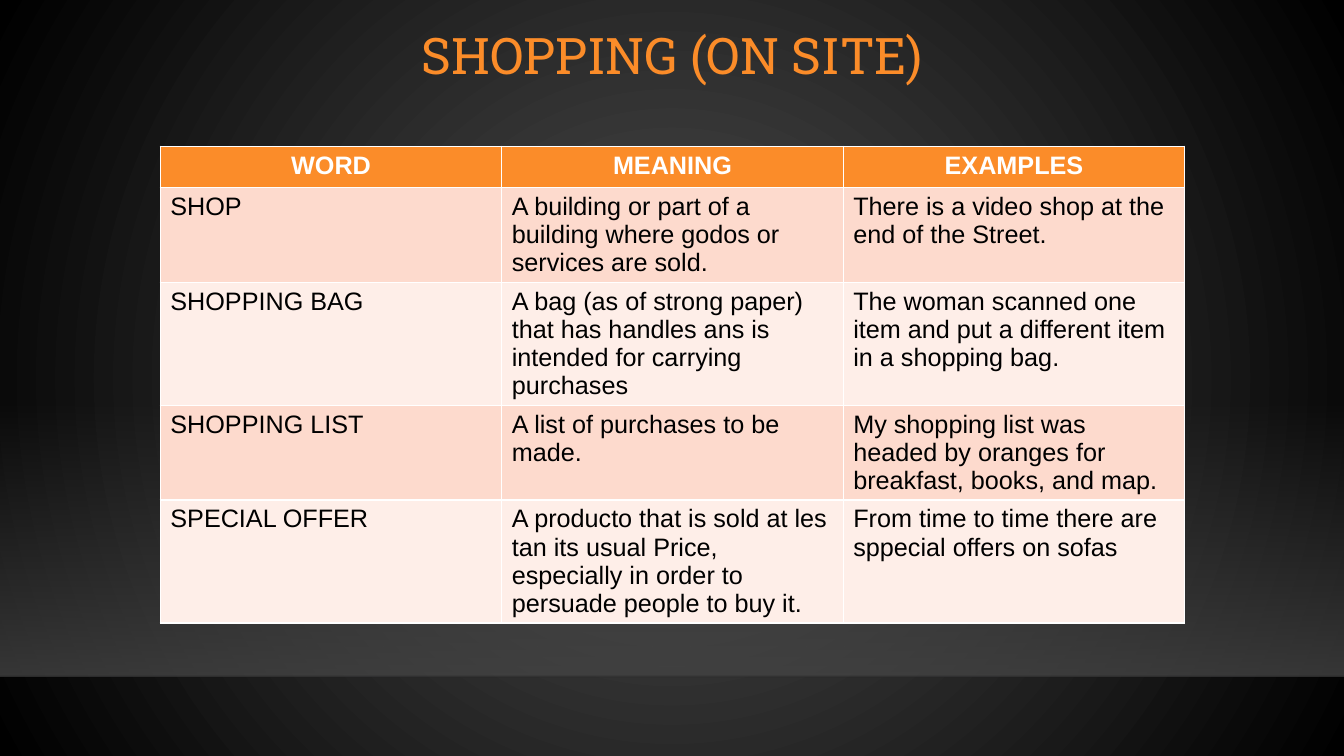
from dataclasses import dataclass

from lxml import etree
from pptx import Presentation
from pptx.dml.color import RGBColor
from pptx.enum import shapes, text
from pptx.oxml import ns
from pptx.util import Inches, Pt


@dataclass(frozen=True)
class Theme:
    accent: str = "FB8C29"
    glow: str = "505050"
    edge: str = "000000"
    floor: str = "454545"
    horizon: str = "000001"
    header_text: str = "FFFFFF"
    body_text: str = "000000"
    bands: tuple = ("FDDACD", "FEEEE8")
    title_font: str = "Roboto Slab"
    table_font: str = "Arial"
    title_size: int = 36
    table_size: int = 18


THEME = Theme()
SLIDE_WIDTH, SLIDE_HEIGHT = 13.33, 7.5
CONTENT_LEFT, CONTENT_WIDTH = 1.59, 10.16
ROW_HEIGHT = 0.41

VOCABULARY = [
    ("WORD", "MEANING", "EXAMPLES"),
    ("SHOP",
     "A building or part of a building where godos or services are sold.",
     "There is a video shop at the end of the Street."),
    ("SHOPPING BAG",
     "A bag (as of strong paper) that has handles ans is intended for carrying purchases",
     "The woman scanned one item and put a different item in a shopping bag."),
    ("SHOPPING LIST",
     "A list of purchases to be made.",
     "My shopping list was headed by oranges for breakfast, books, and map."),
    ("SPECIAL OFFER",
     "A producto that is sold at les tan its usual Price, especially in order to "
     "persuade people to buy it.",
     "From time to time there are sppecial offers on sofas"),
]


def write(frame, wording, *, font, size, color, bold=False, align=None, spacing=None):
    paragraph = frame.paragraphs[0]
    paragraph.alignment = align
    paragraph.line_spacing = spacing
    run = paragraph.add_run()
    run.text = wording
    run.font.name = font
    run.font.size = Pt(size)
    run.font.bold = bold
    run.font.color.rgb = RGBColor.from_string(color)


def set_gradient(fill, start, end):
    fill.gradient()
    for stop, color, position in zip(fill.gradient_stops, (start, end), (0, 1)):
        stop.color.rgb = RGBColor.from_string(color)
        stop.position = position


def set_opacity(element, *percents):
    """Give the RGB colours inside element their opacity, in order."""
    for color, percent in zip(element.iter(ns.qn("a:srgbClr")), percents):
        etree.SubElement(color, ns.qn("a:alpha"), val=str(percent * 1000))


def paint_background(slide):
    set_gradient(slide.background.fill, THEME.glow, THEME.edge)
    linear = next(slide.element.iter(ns.qn("a:lin")))
    radial = etree.Element(ns.qn("a:path"), {"path": "circle"})
    center = {side: "50000" for side in "ltrb"}
    etree.SubElement(radial, ns.qn("a:fillToRect"), center)
    linear.getparent().replace(linear, radial)


def add_floor(slide, left, top, width, height):
    """Fade into a lighter floor that ends at a thin horizon line."""
    floor = slide.shapes.add_shape(
        shapes.MSO_SHAPE.RECTANGLE,
        Inches(left), Inches(top), Inches(width), Inches(height))
    floor.shadow.inherit = False
    floor.line.fill.background()
    set_gradient(floor.fill, THEME.floor, THEME.floor)
    floor.fill.gradient_angle = 270
    set_opacity(floor.element, 0, 80)

    bottom = Inches(top + height)
    horizon = slide.shapes.add_connector(
        shapes.MSO_CONNECTOR.STRAIGHT,
        Inches(left), bottom, Inches(left + width), bottom)
    horizon.line.width = Pt(1)
    horizon.line.color.rgb = RGBColor.from_string(THEME.horizon)
    set_opacity(horizon.element, 20)
    etree.SubElement(horizon.element.spPr, ns.qn("a:effectLst"))


def place_title(slide, wording, left, top, width, height):
    title = slide.shapes.title
    title.left, title.top = Inches(left), Inches(top)
    title.width, title.height = Inches(width), Inches(height)
    frame = title.text_frame
    frame.word_wrap = True
    frame.auto_size = text.MSO_AUTO_SIZE.NONE
    frame.vertical_anchor = text.MSO_ANCHOR.MIDDLE
    write(frame, wording, font=THEME.title_font, size=THEME.title_size,
          color=THEME.accent, align=text.PP_ALIGN.CENTER, spacing=0.9)
    slide.shapes.element.append(title.element)


def add_vocabulary(slide, entries, left, top, width, height):
    holder = slide.shapes.add_table(
        len(entries), len(entries[0]),
        Inches(left), Inches(top), Inches(width), Inches(height))
    vocabulary = holder.table
    for row, entry in enumerate(entries):
        vocabulary.rows[row].height = Inches(ROW_HEIGHT)
        header = row == 0
        fill = THEME.accent if header else THEME.bands[(row - 1) % 2]
        for column, wording in enumerate(entry):
            cell = vocabulary.cell(row, column)
            cell.fill.solid()
            cell.fill.fore_color.rgb = RGBColor.from_string(fill)
            write(cell.text_frame, wording, font=THEME.table_font,
                  size=THEME.table_size, bold=header,
                  color=THEME.header_text if header else THEME.body_text,
                  align=text.PP_ALIGN.CENTER if header else None)
    holder.height = Inches(height)


def main():
    deck = Presentation()
    deck.slide_width, deck.slide_height = Inches(SLIDE_WIDTH), Inches(SLIDE_HEIGHT)
    slide = deck.slides.add_slide(deck.slide_layouts.get_by_name("Title Only"))
    paint_background(slide)
    add_floor(slide, 0, 3.96, SLIDE_WIDTH, 2.75)
    place_title(slide, "SHOPPING (ON SITE)", CONTENT_LEFT, 0, CONTENT_WIDTH, 1.15)
    add_vocabulary(slide, VOCABULARY, CONTENT_LEFT, 1.45, CONTENT_WIDTH, 5.01)
    deck.save("out.pptx")


if __name__ == "__main__":
    main()
